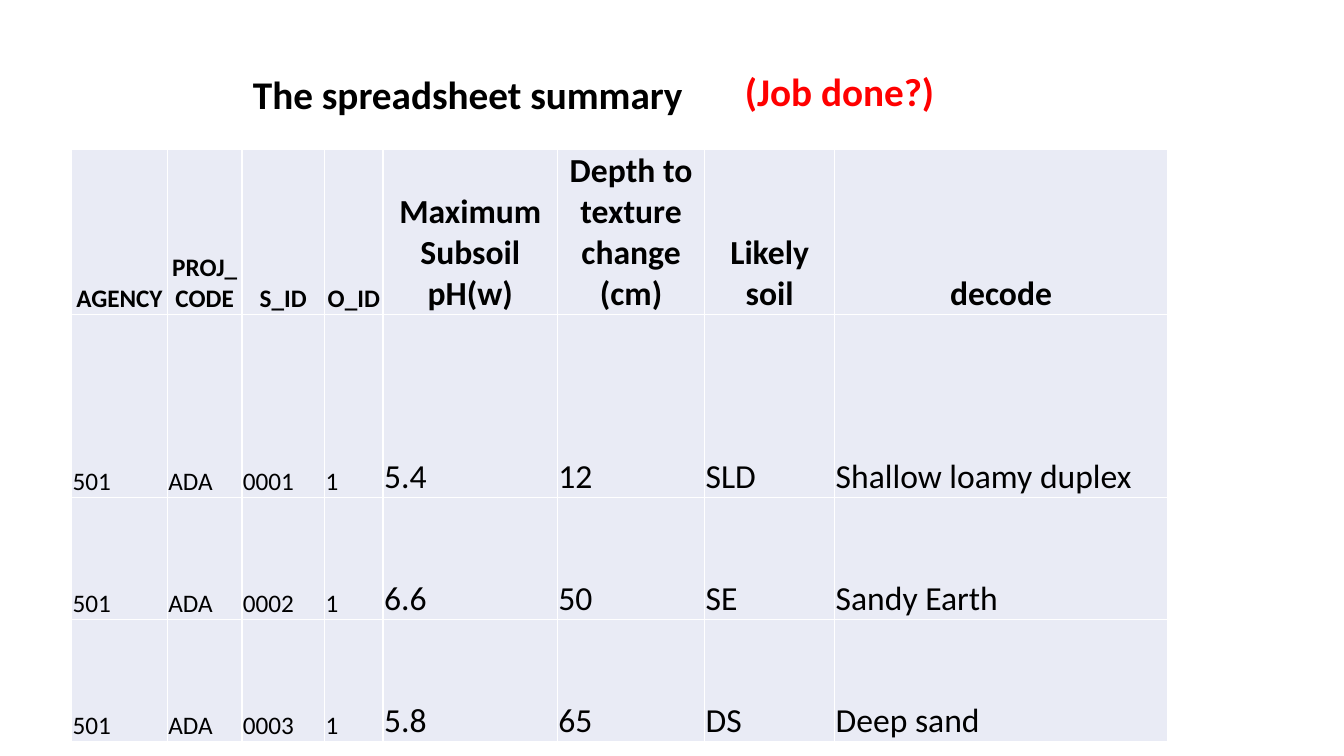
from dataclasses import dataclass

from lxml import etree
from pptx import Presentation
from pptx import util as u
from pptx.dml.color import RGBColor
from pptx.enum import text
from pptx.oxml import ns

FONT = "Calibri"
BLACK = RGBColor(0x00, 0x00, 0x00)
RED = RGBColor(0xFF, 0x00, 0x00)
WHITE = RGBColor(0xFF, 0xFF, 0xFF)
PALE_BLUE = RGBColor(0xE9, 0xEB, 0xF5)


@dataclass(frozen=True)
class Column:
    header: str
    width: float
    size: int
    values: tuple[str, ...]


@dataclass(frozen=True)
class Heading:
    content: str
    left: float
    width: float
    height: float
    color: RGBColor
    line_spacing: float
    space_after: int


COLUMNS = (
    Column("AGENCY", 0.95, 18, ("501", "501", "501")),
    Column("PROJ_CODE", 0.74, 18, ("ADA", "ADA", "ADA")),
    Column("S_ID", 0.82, 18, ("0001", "0002", "0003")),
    Column("O_ID", 0.58, 18, ("1", "1", "1")),
    Column("Maximum Subsoil pH(w)", 1.73, 24, ("5.4", "6.6", "5.8")),
    Column("Depth to texture change (cm)", 1.46, 24, ("12", "50", "65")),
    Column("Likely soil", 1.29, 24, ("SLD", "SE", "DS")),
    Column("decode", 3.3, 24, ("Shallow loamy duplex", "Sandy Earth", "Deep sand")),
)
ROW_HEIGHTS = (1.42, 1.82, 1.21, 1.21)
HEADINGS = (
    Heading("The spreadsheet summary", 2.41, 4.88, 0.58, BLACK, 1.07, 8),
    Heading("(Job done?)", 7.29, 2.08, 0.57, RED, 1.0, 0),
)


def write_text(frame, content: str, *, size: int, color: RGBColor = BLACK,
               bold: bool = False, align=text.PP_ALIGN.LEFT,
               line_spacing: float = 1.0, space_after: int = 0) -> None:
    frame.word_wrap = True
    paragraph = frame.paragraphs[0]
    paragraph.alignment = align
    paragraph.line_spacing = line_spacing
    paragraph.space_after = u.Pt(space_after)
    run = paragraph.add_run()
    run.text = content
    run.font.name = FONT
    run.font.size = u.Pt(size)
    run.font.bold = bold
    run.font.color.rgb = color


def add_borders(cell, color: RGBColor, width: float) -> None:
    properties = cell._tc.get_or_add_tcPr()
    for side in ("a:lnL", "a:lnR", "a:lnT", "a:lnB"):
        line = etree.SubElement(properties, ns.qn(side), w=str(u.Pt(width)))
        fill = etree.SubElement(line, ns.qn("a:solidFill"))
        etree.SubElement(fill, ns.qn("a:srgbClr"), val=str(color))


def format_cell(cell) -> None:
    cell.margin_left = cell.margin_right = cell.margin_top = u.Inches(0.01)
    cell.margin_bottom = u.Inches(0)
    cell.vertical_anchor = text.MSO_ANCHOR.BOTTOM
    add_borders(cell, WHITE, 1)
    cell.fill.solid()
    cell.fill.fore_color.rgb = PALE_BLUE


def add_soil_table(slide) -> None:
    width = sum(column.width for column in COLUMNS)
    table = slide.shapes.add_table(
        len(ROW_HEIGHTS), len(COLUMNS), u.Inches(0.71), u.Inches(1.48),
        u.Inches(width), u.Inches(sum(ROW_HEIGHTS))).table
    table.horz_banding = False
    for row, height in zip(table.rows, ROW_HEIGHTS):
        row.height = u.Inches(height)
    for column_index, column in enumerate(COLUMNS):
        table.columns[column_index].width = u.Inches(column.width)
        for row_index, content in enumerate((column.header, *column.values)):
            is_header = row_index == 0
            cell = table.cell(row_index, column_index)
            format_cell(cell)
            write_text(cell.text_frame, content, size=column.size, bold=is_header,
                       align=text.PP_ALIGN.CENTER if is_header else text.PP_ALIGN.LEFT)


def add_heading(slide, heading: Heading) -> None:
    shape = slide.shapes.add_textbox(
        u.Inches(heading.left), u.Inches(0.62),
        u.Inches(heading.width), u.Inches(heading.height))
    shape.text_frame.auto_size = text.MSO_AUTO_SIZE.SHAPE_TO_FIT_TEXT
    write_text(shape.text_frame, heading.content, size=28, color=heading.color, bold=True,
               line_spacing=heading.line_spacing, space_after=heading.space_after)


def main() -> None:
    presentation = Presentation()
    presentation.slide_width = u.Inches(13.33)
    presentation.slide_height = u.Inches(7.5)
    slide = presentation.slides.add_slide(presentation.slide_layouts[6])
    add_soil_table(slide)
    for heading in HEADINGS:
        add_heading(slide, heading)
    presentation.save("out.pptx")


if __name__ == "__main__":
    main()
